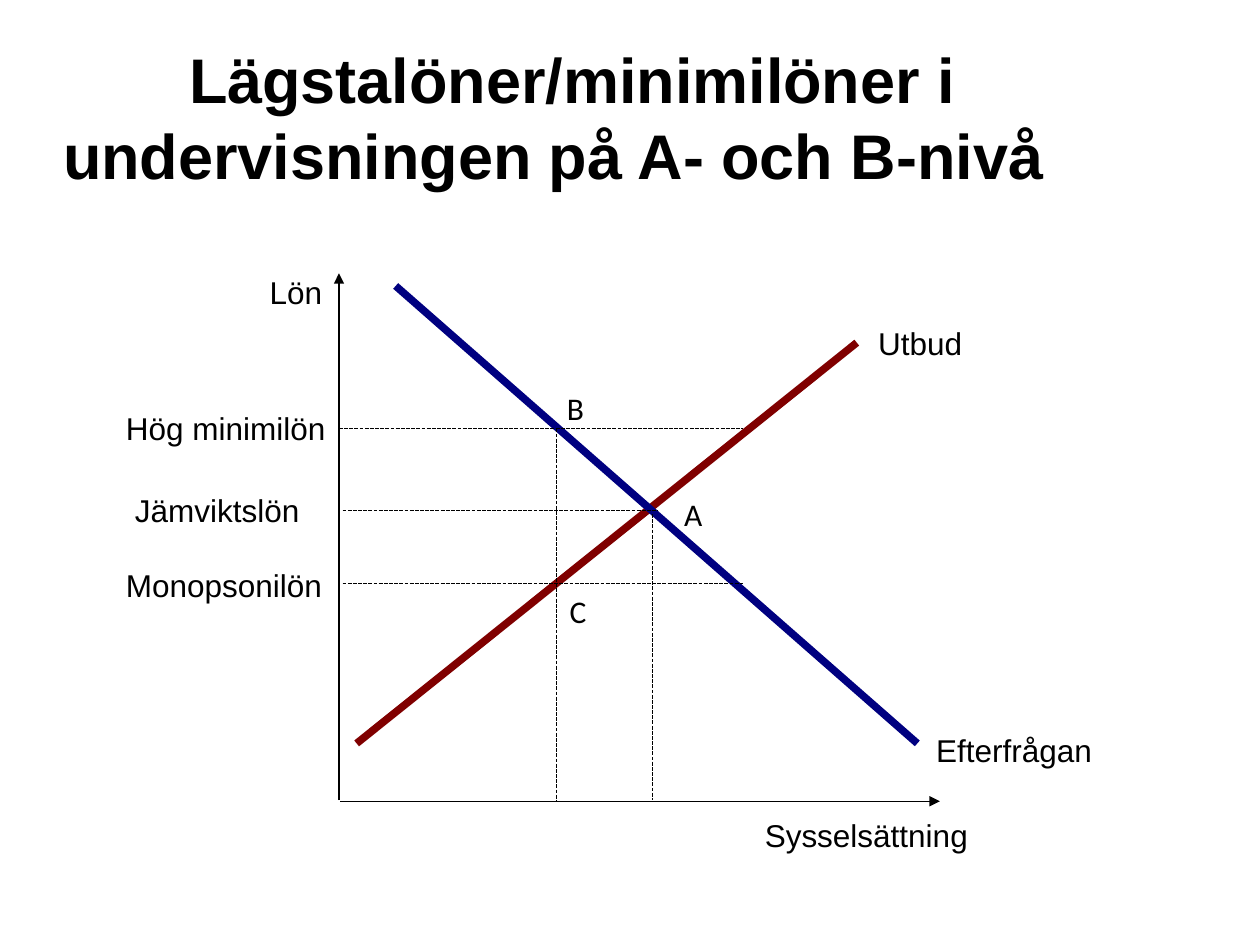
from pptx import Presentation
from pptx import util as u
from pptx.dml.color import RGBColor
from pptx.enum import dml, shapes, text
from pptx.oxml.ns import qn
from lxml import etree

COLORS = {"ink": "000000", "supply": "800000", "demand": "000080"}

presentation = Presentation()
presentation.slide_width = u.Pt(720)
presentation.slide_height = u.Pt(540)
slide = presentation.slides.add_slide(presentation.slide_layouts[5])


def add_line(start, end, color="ink", width=0.75):
    line = slide.shapes.add_connector(
        shapes.MSO_CONNECTOR.STRAIGHT, *[u.Pt(value) for value in start + end])
    line.line.color.rgb = RGBColor.from_string(COLORS[color])
    line.line.width = u.Pt(width)
    etree.SubElement(line._element.spPr, qn("a:effectLst"))
    return line


def add_run(paragraph, words, size=18, font="Arial", bold=False):
    run = paragraph.add_run()
    run.text = words
    run.font.size = u.Pt(size)
    run.font.name = font
    run.font.bold = bold
    run.font.color.rgb = RGBColor.from_string(COLORS["ink"])


title = slide.shapes.title
title.left, title.top, title.width, title.height = [u.Pt(v) for v in (36, 21.6, 648, 90)]
frame = title.text_frame
frame.auto_size = text.MSO_AUTO_SIZE.NONE
frame.word_wrap = False
frame.vertical_anchor = text.MSO_ANCHOR.MIDDLE
frame.margin_left = frame.margin_right = frame.margin_top = frame.margin_bottom = 0
for index, words in enumerate(["\tLägstalöner/minimilöner i", "undervisningen på A- och B-nivå"]):
    paragraph = frame.add_paragraph() if index else frame.paragraphs[0]
    paragraph.alignment = text.PP_ALIGN.LEFT
    paragraph.line_spacing = 1.0
    paragraph.space_before = u.Pt(0)
    tabs = etree.SubElement(paragraph._p.get_or_add_pPr(), qn("a:tabLst"))
    etree.SubElement(tabs, qn("a:tab"), pos=str(u.Pt(72)), algn="l")
    add_run(paragraph, words, size=36, bold=True)

axes = [((193.7, 457.2), (193.7, 156.2)), ((194.4, 457.9), (537.1, 457.9))]
for start, end in axes:
    axis = add_line(start, end)
    etree.SubElement(axis.line._get_or_add_ln(), qn("a:tailEnd"), type="triangle")

add_line((203.8, 424.8), (489.6, 195.8), "supply", 4.31)
add_line((226.1, 163.4), (524.2, 424.8), "demand", 4.31)

guides = [
    ((195.8, 291.6), (375.8, 291.6)),
    ((373, 293.8), (373, 457.2)),
    ((318.2, 244.8), (318.2, 457.2)),
    ((193.7, 244.8), (424.8, 244.8)),
    ((195.8, 333.4), (424.8, 333.4)),
]
for start, end in guides:
    add_line(start, end).line.dash_style = dml.MSO_LINE.SQUARE_DOT

WIDE, NARROW = (12.24, 9.36), (6.48, 2.88)
labels = [
    ("Sysselsättning", 424.8, 457.2, 129.6, 36.7, WIDE, "Arial"),
    ("Lön", 141.8, 146.9, 51.8, 36.7, WIDE, "Arial"),
    ("Utbud", 489.6, 175.7, 119.5, 36.7, WIDE, "Arial"),
    ("Efterfrågan", 522.7, 408.2, 105.1, 36.7, WIDE, "Arial"),
    ("Hög minimilön", 65.5, 231.1, 126.7, 24.5, NARROW, "Arial"),
    ("Jämviktslön", 70.6, 277.9, 120.2, 24.5, NARROW, "Arial"),
    ("Monopsonilön", 65.5, 320.4, 129.6, 24.5, NARROW, "Arial"),
    ("A", 384.5, 280.1, 49, 24.5, NARROW, "Calibri"),
    ("B", 317.5, 219.6, 23.8, 24.5, NARROW, "Calibri"),
    ("C", 319, 335.5, 24.5, 24.5, NARROW, "Calibri"),
]
for words, left, top, width, height, (side, edge), font in labels:
    label = slide.shapes.add_textbox(u.Pt(left), u.Pt(top), u.Pt(width), u.Pt(height))
    frame = label.text_frame
    frame.word_wrap = False
    frame.margin_left = u.Pt(side)
    frame.margin_right = 0
    frame.margin_top = frame.margin_bottom = u.Pt(edge)
    add_run(frame.paragraphs[0], words, font=font)

presentation.save("out.pptx")
